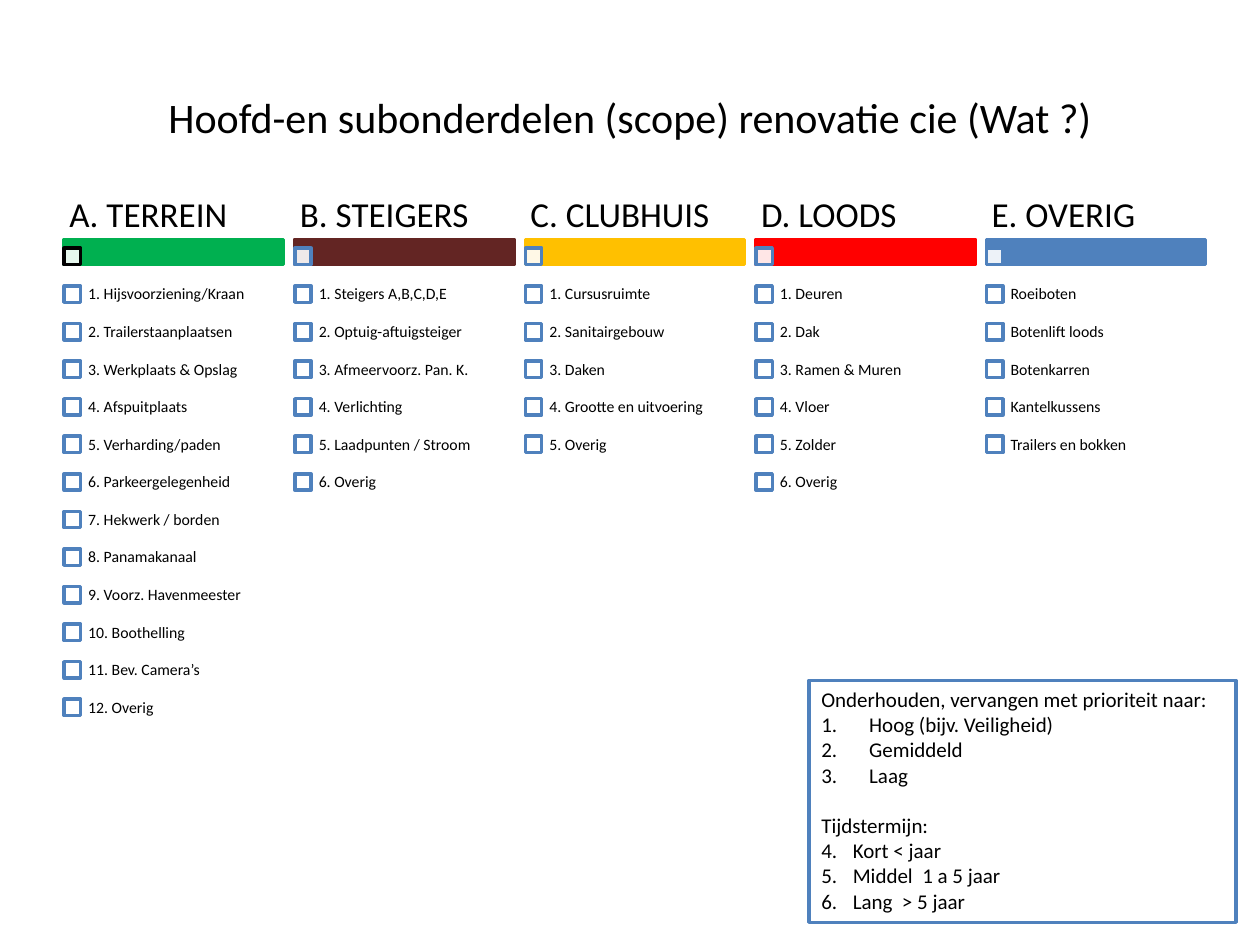
from pptx import Presentation
from pptx.dml.color import RGBColor
from pptx.enum.shapes import MSO_SHAPE
from pptx.enum.text import MSO_ANCHOR, MSO_AUTO_SIZE, PP_ALIGN
from pptx.oxml.ns import qn
from pptx.util import Inches, Pt
from lxml.etree import SubElement

COLORS = {
    "black": "000000",
    "white": "FFFFFF",
    "blue": "4F81BD",
    "green": "00B050",
    "brown": "632523",
    "amber": "FFC000",
    "red": "FF0000",
}

COLUMNS = [
    ("A. TERREIN", "green", "black", [
        "1. Hijsvoorziening/Kraan", "2. Trailerstaanplaatsen",
        "3. Werkplaats & Opslag", "4. Afspuitplaats",
        "5. Verharding/paden", "6. Parkeergelegenheid",
        "7. Hekwerk / borden", "8. Panamakanaal",
        "9. Voorz. Havenmeester", "10. Boothelling",
        "11. Bev. Camera’s", "12. Overig"]),
    ("B. STEIGERS", "brown", "blue", [
        "1. Steigers A,B,C,D,E", "2. Optuig-aftuigsteiger",
        "3. Afmeervoorz. Pan. K.", "4. Verlichting",
        "5. Laadpunten / Stroom", "6. Overig"]),
    ("C. CLUBHUIS", "amber", "blue", [
        "1. Cursusruimte", "2. Sanitairgebouw", "3. Daken",
        "4. Grootte en uitvoering", "5. Overig"]),
    ("D. LOODS", "red", "blue", [
        "1. Deuren", "2. Dak", "3. Ramen & Muren",
        "4. Vloer", "5. Zolder", "6. Overig"]),
    ("E. OVERIG", "blue", "blue", [
        "Roeiboten", "Botenlift loods", "Botenkarren",
        "Kantelkussens", "Trailers en bokken"]),
]

PRIORITIES = ["Hoog (bijv. Veiligheid)", "Gemiddeld", "Laag"]
TERMS = ["Kort < jaar", "Middel  1 a 5 jaar", "Lang  > 5 jaar"]

COLUMN_LEFT, COLUMN_STEP, COLUMN_WIDTH = 0.51, 1.83, 1.74
ROW_TOP, ROW_STEP, ROW_HEIGHT = 2.19, 3.28 / 11, 0.3
CHECKBOX_SIZE, LABEL_INDENT = 0.13, 0.12


def write_text(paragraph, text, size=12, font="Calibri", color="black",
               align=PP_ALIGN.LEFT, line_spacing=None, space_before=0):
    paragraph.alignment = align
    paragraph.space_before = Pt(space_before)
    if line_spacing:
        paragraph.line_spacing = line_spacing
    run = paragraph.add_run()
    run.text = text
    run.font.size = Pt(size)
    run.font.name = font
    run.font.color.rgb = RGBColor.from_string(COLORS[color])


def number_paragraph(paragraph, indent, start):
    properties = paragraph._p.get_or_add_pPr()
    properties.set("marL", str(Inches(indent)))
    properties.set("indent", str(-Inches(indent)))
    SubElement(properties, qn("a:buFont"), typeface="+mj-lt")
    SubElement(properties, qn("a:buAutoNum"), type="arabicPeriod", startAt=str(start))


class SlideBuilder:
    line_width = Pt(2)

    def __init__(self, slide):
        self.slide = slide

    def title(self, text, left, top, width, height):
        shape = self.slide.shapes.title
        shape.left, shape.top = Inches(left), Inches(top)
        shape.width, shape.height = Inches(width), Inches(height)
        shape.text_frame.vertical_anchor = MSO_ANCHOR.MIDDLE
        write_text(shape.text_frame.paragraphs[0], text, size=24, align=PP_ALIGN.CENTER)

    def rectangle(self, left, top, width, height, fill="white", line="blue", opacity=100):
        shape = self.slide.shapes.add_shape(
            MSO_SHAPE.RECTANGLE, Inches(left), Inches(top), Inches(width), Inches(height))
        shape.shadow.inherit = False
        shape.fill.solid()
        shape.fill.fore_color.rgb = RGBColor.from_string(COLORS[fill])
        shape.line.color.rgb = RGBColor.from_string(COLORS[line])
        shape.line.width = self.line_width
        if opacity < 100:
            color = shape._element.spPr.find(qn("a:solidFill"))[0]
            SubElement(color, qn("a:alpha"), val=str(opacity * 1000))
        return shape

    def checkbox(self, left, top, line="blue", opacity=100):
        self.rectangle(left, top, CHECKBOX_SIZE, CHECKBOX_SIZE, line=line, opacity=opacity)

    def label(self, text, left, top, width, height, size, margins):
        shape = self.slide.shapes.add_textbox(
            Inches(left), Inches(top), Inches(width), Inches(height))
        frame = shape.text_frame
        frame.word_wrap = True
        frame.vertical_anchor = MSO_ANCHOR.MIDDLE
        frame.margin_left = frame.margin_right = Inches(margins[0])
        frame.margin_top = frame.margin_bottom = Inches(margins[1])
        write_text(frame.paragraphs[0], text, size=size, line_spacing=0.9)

    def column(self, left, heading, bar_color, marker_color, items):
        self.rectangle(left, 1.9, COLUMN_WIDTH, 0.2, fill=bar_color, line=bar_color)
        self.checkbox(left, 1.97, line=marker_color, opacity=90)
        self.label(heading, left, 1.53, COLUMN_WIDTH, 0.37, 20, (0.04, 0.03))
        for row, item in enumerate(items):
            top = ROW_TOP + row * ROW_STEP
            self.checkbox(left, top + 0.08)
            self.label(item, left + LABEL_INDENT, top, COLUMN_WIDTH - LABEL_INDENT,
                       ROW_HEIGHT, 9, (0.07, 0.07))

    def legend(self, left, top, width, height, sections):
        frame = self.rectangle(left, top, width, height).text_frame
        frame.word_wrap = True
        frame.auto_size = MSO_AUTO_SIZE.SHAPE_TO_FIT_TEXT
        frame.vertical_anchor = MSO_ANCHOR.TOP
        start = 1
        for heading, indent, items in sections:
            first = start == 1
            paragraph = frame.paragraphs[0] if first else frame.add_paragraph()
            write_text(paragraph, heading, space_before=0 if first else 14.4)
            for item in items:
                paragraph = frame.add_paragraph()
                write_text(paragraph, item)
                number_paragraph(paragraph, indent, start)
            start += len(items)


def main():
    presentation = Presentation()
    presentation.slide_width = Inches(10)
    presentation.slide_height = Inches(7.5)
    builder = SlideBuilder(presentation.slides.add_slide(presentation.slide_layouts[5]))
    builder.title("Hoofd-en subonderdelen (scope) renovatie cie (Wat ?)", 0.5, 0.3, 9, 1.25)
    for index, column in enumerate(COLUMNS):
        builder.column(COLUMN_LEFT + index * COLUMN_STEP, *column)
    builder.legend(6.42, 5.4, 3.39, 1.92, [
        ("Onderhouden, vervangen met prioriteit naar:", 0.38, PRIORITIES),
        ("Tijdstermijn:", 0.25, TERMS),
    ])
    presentation.save("out.pptx")


if __name__ == "__main__":
    main()
